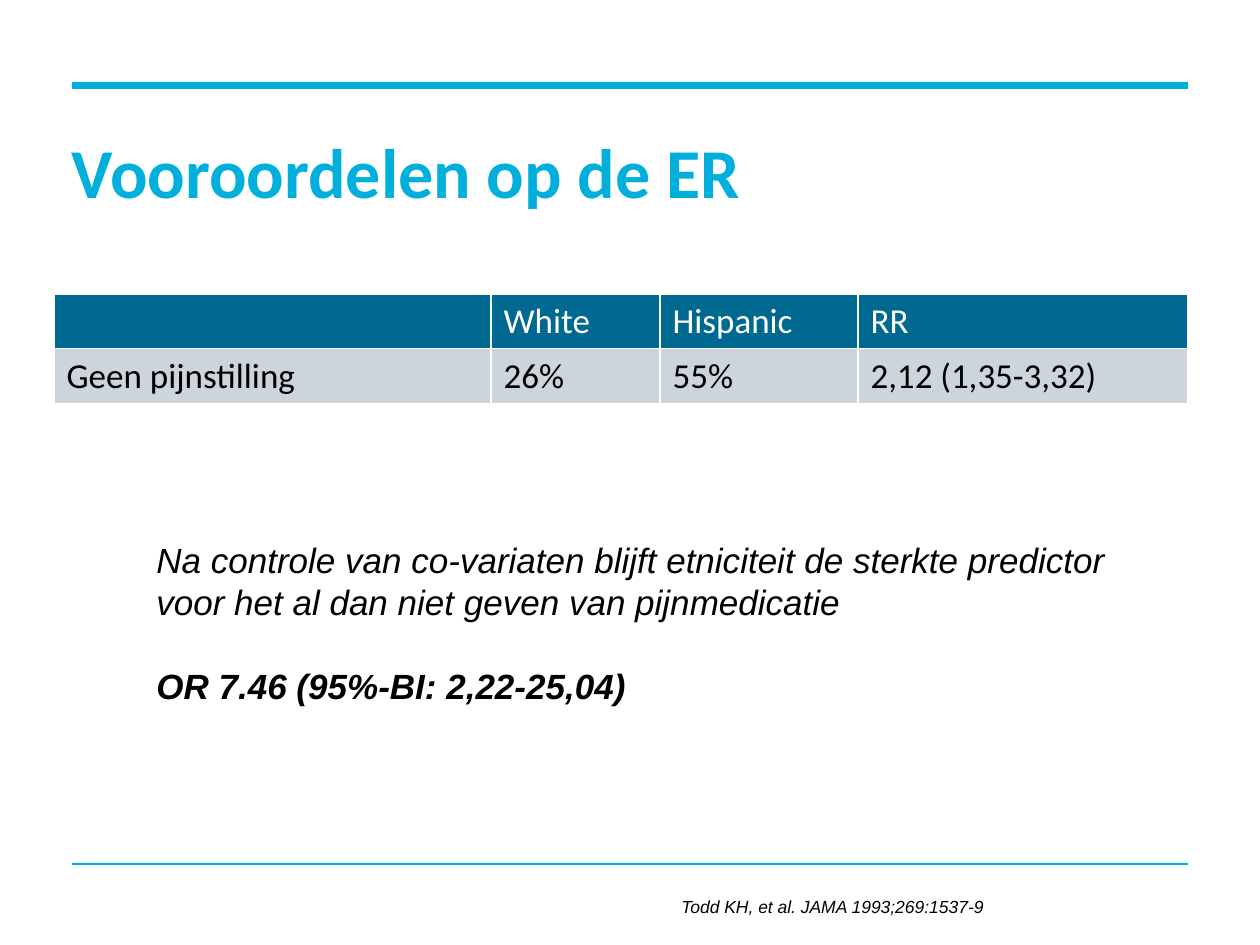
"""Build a slide on prejudice in pain treatment at the emergency room."""
from lxml.etree import SubElement
from pptx import Presentation
from pptx.dml.color import RGBColor
from pptx.enum.shapes import MSO_SHAPE
from pptx.enum.text import MSO_ANCHOR
from pptx.oxml.ns import qn
from pptx.util import Pt

EMU_PER_PX = 914400 / 126
COLORS = {"accent": "00AFDC", "header": "006991", "row": "CCD4DC",
          "white": "FFFFFF", "black": "000000"}
COLUMN_WIDTHS = [437, 169, 198, 330]
ROW_HEIGHT = 54
ROWS = [["", "White", "Hispanic", "RR"],
        ["Geen pijnstilling", "26%", "55%", "2,12 (1,35-3,32)"]]
ROW_STYLES = [("header", "white"), ("row", "black")]


def px(length):
    return round(length * EMU_PER_PX)


def color(name):
    return RGBColor.from_string(COLORS[name])


def write(paragraph, text, size=20, font="Arial", ink="black", bold=False,
          italic=False, line_spacing=None, space_before=None):
    run = paragraph.add_run()
    run.text = text
    run.font.size = Pt(size)
    run.font.name = font
    run.font.bold = bold
    run.font.italic = italic
    run.font.color.rgb = color(ink)
    if line_spacing:
        paragraph.line_spacing = Pt(line_spacing)
    if space_before:
        paragraph.space_before = Pt(space_before)


def add_text_frame(slide, left, top, width, height):
    box = slide.shapes.add_textbox(px(left), px(top), px(width), px(height))
    box.text_frame.word_wrap = True
    return box.text_frame


def add_rule(slide, top, height):
    rule = slide.shapes.add_shape(
        MSO_SHAPE.RECTANGLE, px(72), px(top), px(1116), px(height))
    rule.shadow.inherit = False
    rule.fill.solid()
    rule.fill.fore_color.rgb = color("accent")
    rule.line.fill.background()


def add_title(slide, text):
    frame = add_text_frame(slide, 72, 139, 1116, 73)
    frame.margin_left = frame.margin_right = 0
    frame.margin_top = frame.margin_bottom = 0
    frame.vertical_anchor = MSO_ANCHOR.MIDDLE
    write(frame.paragraphs[0], text, size=40, font="Calibri", ink="accent",
          bold=True, line_spacing=42)


def set_borders(cell):
    properties = cell._tc.get_or_add_tcPr()
    for position, side in enumerate(("a:lnL", "a:lnR", "a:lnT", "a:lnB")):
        line = properties.makeelement(qn(side), {"w": str(Pt(1))})
        fill = SubElement(line, qn("a:solidFill"))
        SubElement(fill, qn("a:srgbClr"), val=COLORS["white"])
        properties.insert(position, line)


def add_results_table(slide, left, top):
    table = slide.shapes.add_table(
        len(ROWS), len(COLUMN_WIDTHS), px(left), px(top),
        px(sum(COLUMN_WIDTHS)), px(ROW_HEIGHT * len(ROWS))).table
    for column, width in zip(table.columns, COLUMN_WIDTHS):
        column.width = px(width)
    for row, texts, (fill, ink) in zip(table.rows, ROWS, ROW_STYLES):
        row.height = px(ROW_HEIGHT)
        for cell, text in zip(row.cells, texts):
            cell.fill.solid()
            cell.fill.fore_color.rgb = color(fill)
            set_borders(cell)
            if text:
                write(cell.text_frame.paragraphs[0], text, font="Calibri", ink=ink)


def add_conclusion(slide):
    frame = add_text_frame(slide, 144, 532, 993, 183)
    write(frame.paragraphs[0],
          "Na controle van co-variaten blijft etniciteit de sterkte predictor "
          "voor het al dan niet geven van pijnmedicatie",
          italic=True, line_spacing=24)
    write(frame.add_paragraph(), "OR 7.46 (95%-BI: 2,22-25,04)",
          bold=True, italic=True, line_spacing=24, space_before=24)


def add_citation(slide, text):
    frame = add_text_frame(slide, 669, 890, 525, 34)
    write(frame.paragraphs[0], text, size=10, italic=True)


def main():
    presentation = Presentation()
    presentation.slide_width = px(1260)
    presentation.slide_height = px(945)
    slide = presentation.slides.add_slide(presentation.slide_layouts[6])
    add_rule(slide, top=82, height=7)
    add_rule(slide, top=863, height=2)
    add_title(slide, "Vooroordelen op de ER")
    add_citation(slide, "Todd KH, et al. JAMA 1993;269:1537-9")
    add_results_table(slide, left=54, top=294)
    add_conclusion(slide)
    presentation.save("out.pptx")


if __name__ == "__main__":
    main()
